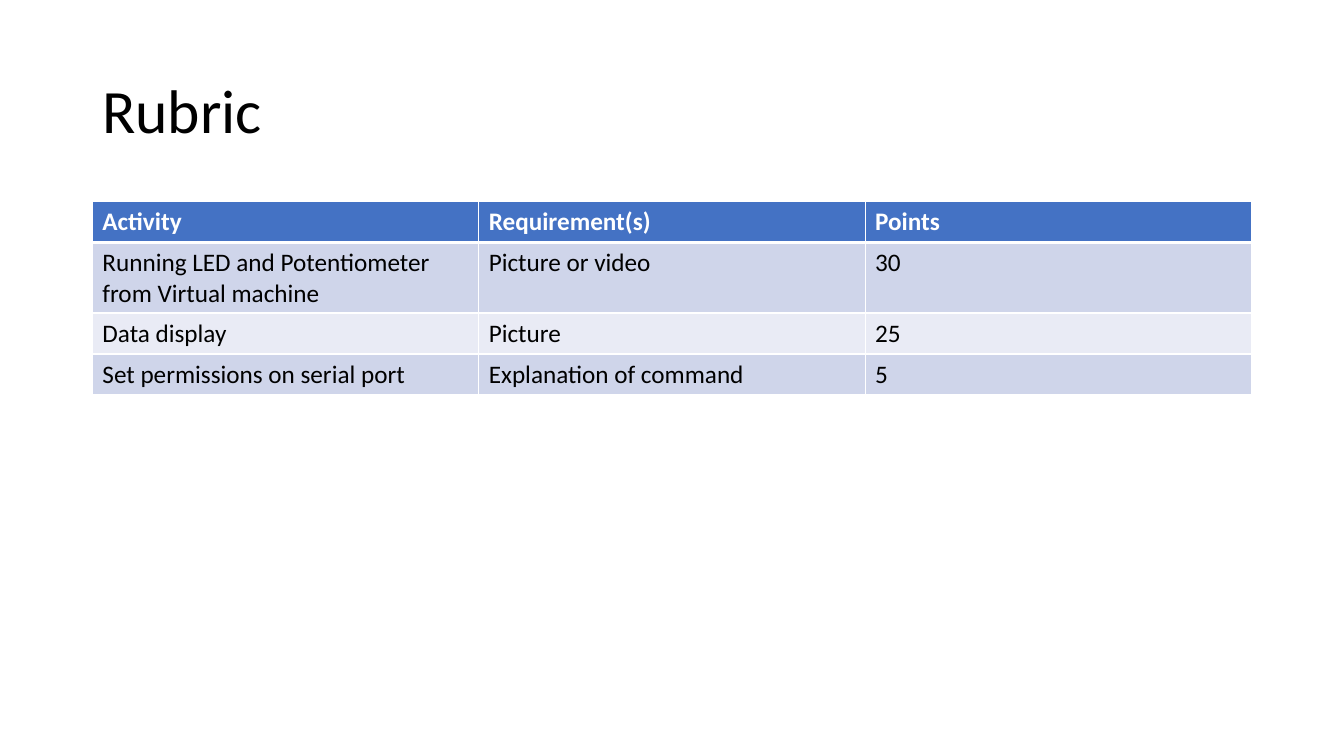
import pptx
import pptx.dml.color
import pptx.enum.text
import pptx.oxml
import pptx.oxml.ns
import pptx.util

Pt = pptx.util.Pt

FONT = "Calibri"
BLACK, WHITE = "000000", "FFFFFF"
HEADER_FILL = "4472C4"
BAND_FILLS = ("CFD5EA", "E9EBF5")
LEFT, WIDTH = 66, 828
HEADER = ("Activity", "Requirement(s)", "Points")
ACTIVITIES = (
    ("Running LED and Potentiometer from Virtual machine", "Picture or video", "30"),
    ("Data display", "Picture", "25"),
    ("Set permissions on serial port", "Explanation of command", "5"),
)
ROW_HEIGHTS = (29.2, 50.4, 29.2, 29.2)


def rgb(color):
    return pptx.dml.color.RGBColor.from_string(color)


def add_run(p, text, size, color, bold=False):
    r = p.add_run()
    r.text = text
    r.font.name = FONT
    r.font.size = Pt(size)
    r.font.bold = bold
    r.font.color.rgb = rgb(color)


def add_title(s, text):
    sp = s.shapes.add_textbox(Pt(LEFT), Pt(28.75), Pt(WIDTH), Pt(104.4))
    tf = sp.text_frame
    tf.word_wrap = True
    tf.vertical_anchor = pptx.enum.text.MSO_ANCHOR.MIDDLE
    p = tf.paragraphs[0]
    p.line_spacing = 0.9
    add_run(p, text, 44, BLACK)


def add_border(cell, side, width):
    """Draw a white border on one side: L, R, T or B."""
    ns = pptx.oxml.ns.nsdecls("a")
    line = pptx.oxml.parse_xml(
        f'<a:ln{side} {ns} w="{Pt(width)}"><a:solidFill>'
        f'<a:srgbClr val="{WHITE}"/></a:solidFill></a:ln{side}>'
    )
    cell._tc.get_or_add_tcPr().append(line)


def style_cell(cell, row):
    """Set borders, then fill, in the order the cell properties require."""
    widths = {"L": 1, "R": 1, "T": 3 if row == 1 else 1, "B": 3 if row == 0 else 1}
    for side, width in widths.items():
        add_border(cell, side, width)
    cell.fill.solid()
    cell.fill.fore_color.rgb = rgb(BAND_FILLS[(row - 1) % 2] if row else HEADER_FILL)


def add_rubric(s):
    rows = (HEADER, *ACTIVITIES)
    table = s.shapes.add_table(
        len(rows), len(HEADER), Pt(LEFT), Pt(144), Pt(WIDTH), Pt(sum(ROW_HEIGHTS))
    ).table
    for column in table.columns:
        column.width = Pt(WIDTH / len(HEADER))
    for i, (texts, height) in enumerate(zip(rows, ROW_HEIGHTS)):
        table.rows[i].height = Pt(height)
        for j, text in enumerate(texts):
            cell = table.cell(i, j)
            style_cell(cell, i)
            add_run(cell.text_frame.paragraphs[0], text, 18,
                    BLACK if i else WHITE, bold=i == 0)


def main():
    prs = pptx.Presentation()
    prs.slide_width, prs.slide_height = Pt(960), Pt(540)
    s = prs.slides.add_slide(prs.slide_layouts[6])
    add_title(s, "Rubric")
    add_rubric(s)
    prs.save("out.pptx")


if __name__ == "__main__":
    main()
